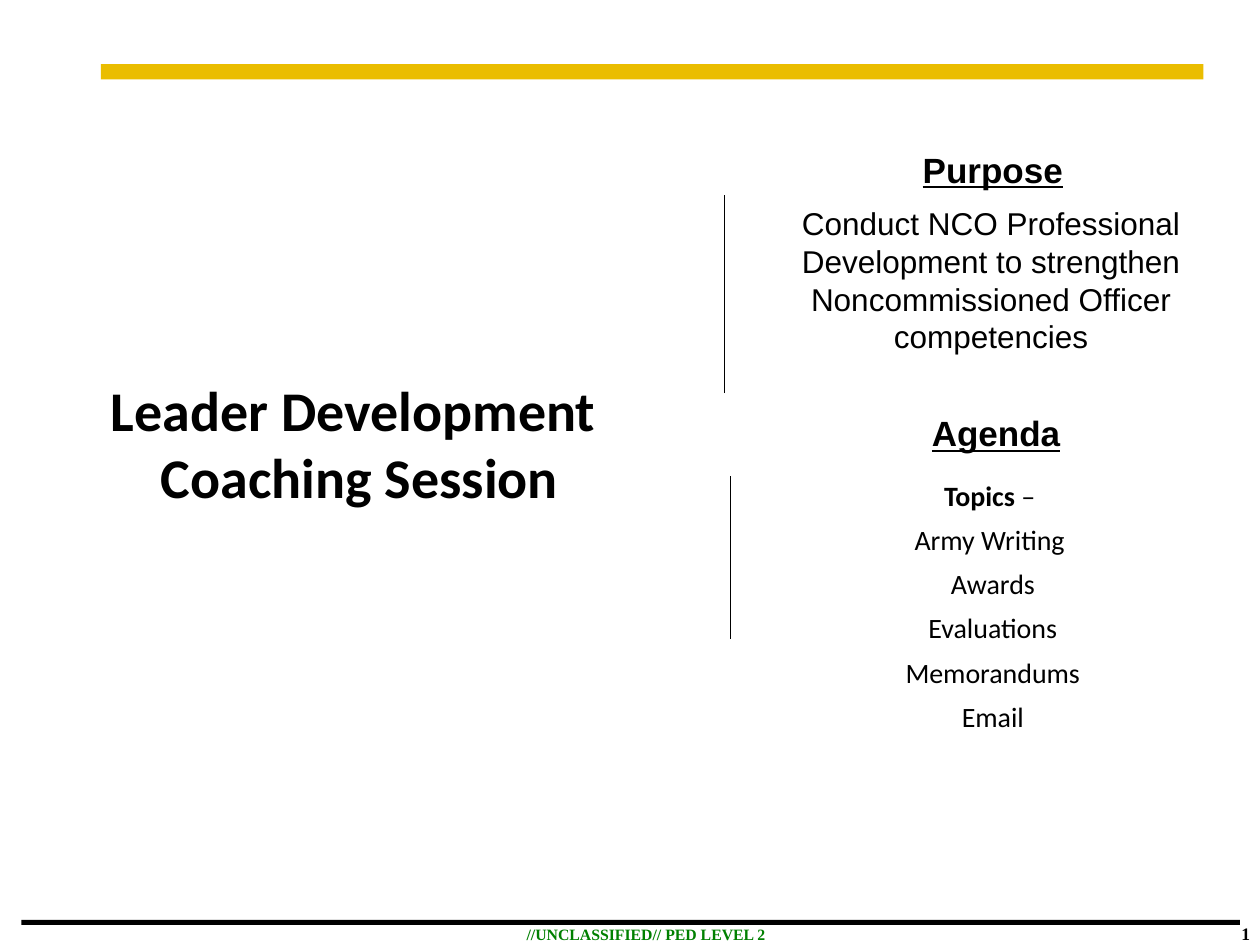
from dataclasses import dataclass

from lxml import etree
from pptx import Presentation
from pptx import util as u
from pptx.dml.color import RGBColor
from pptx.enum import shapes, text
from pptx.oxml.ns import qn


@dataclass(frozen=True)
class Theme:
    black: str = "000000"
    gold: str = "EABD00"
    green: str = "008000"
    sans: str = "Arial"
    body: str = "Calibri"
    serif: str = "Times New Roman"
    title: int = 32
    head: int = 20
    text: int = 18
    topic: int = 16
    page: int = 10
    mark: int = 9
    gap: int = 6
    rule: float = 0.75


THEME = Theme()
MID = text.PP_ALIGN.CENTER
END = text.PP_ALIGN.RIGHT


def put(obj, vals):
    for name, val in vals.items():
        setattr(obj, name, val)


def add_bar(slide, area, color):
    kind = shapes.MSO_SHAPE.RECTANGLE
    bar = slide.shapes.add_shape(kind, *map(u.Inches, area))
    bar.shadow.inherit = False
    bar.fill.solid()
    bar.fill.fore_color.rgb = RGBColor.from_string(color)
    bar.line.fill.background()


def add_rule(slide, x, top, end):
    kind = shapes.MSO_CONNECTOR.STRAIGHT
    ends = map(u.Inches, (x, end, x, top))
    rule = slide.shapes.add_connector(kind, *ends)
    rule.line.color.rgb = RGBColor.from_string(THEME.black)
    rule.line.width = u.Pt(THEME.rule)
    etree.SubElement(rule._element.spPr, qn("a:effectLst"))


def add_text(slide, area, lines, face, size, color=THEME.black,
             align=MID, gap=0, **style):
    box = slide.shapes.add_textbox(*map(u.Inches, area))
    frame = box.text_frame
    frame.word_wrap = True
    form = {"name": face, "size": u.Pt(size), **style}
    for num, line in enumerate(lines):
        para = frame.add_paragraph() if num else frame.paragraphs[0]
        para.alignment = align
        if num and gap:
            para.space_before = u.Pt(gap)
        for part, extra in line if isinstance(line, list) else [(line, {})]:
            run = para.add_run()
            run.text = part
            put(run.font, {**form, **extra})
            run.font.color.rgb = RGBColor.from_string(color)


def main():
    deck = Presentation()
    put(deck, {"slide_width": u.Inches(10), "slide_height": u.Inches(7.5)})
    slide = deck.slides.add_slide(deck.slide_layouts[6])

    add_bar(slide, (0.8, 0.51, 8.75, 0.12), THEME.gold)
    add_bar(slide, (0.17, 7.3, 9.67, 0.04), THEME.black)
    add_text(slide, (4, 7.29, 2.25, 0.25), ["//UNCLASSIFIED// PED LEVEL 2"],
             THEME.serif, THEME.mark, THEME.green, bold=True)
    add_text(slide, (9.5, 7.28, 0.52, 0.26), ["1"],
             THEME.serif, THEME.page, align=END, bold=True)

    add_text(slide, (-0.04, 2.93, 5.79, 1.18),
             ["Leader Development ", "Coaching Session"],
             THEME.body, THEME.title, bold=True)
    add_text(slide, (5.74, 1.57, 4.25, 1.31),
             ["Conduct NCO Professional Development to strengthen "
              "Noncommissioned Officer competencies"],
             THEME.sans, THEME.text)
    for word, area in (("Purpose", (5.75, 1.13, 4.26, 0.44)),
                       ("Agenda", (5.8, 3.22, 4.21, 0.44))):
        add_text(slide, area, [word], THEME.sans, THEME.head,
                 bold=True, underline=True)

    topics = [[("Topics ", {"bold": True}), ("– ", {})], "Army Writing ",
              "Awards", "Evaluations", "Memorandums", "Email"]
    add_text(slide, (5.78, 3.75, 4.2, 2.14), topics,
             THEME.body, THEME.topic, gap=THEME.gap)

    add_rule(slide, 5.8, 3.78, 5.07)
    add_rule(slide, 5.75, 1.55, 3.12)
    deck.save("out.pptx")


if __name__ == "__main__":
    main()
